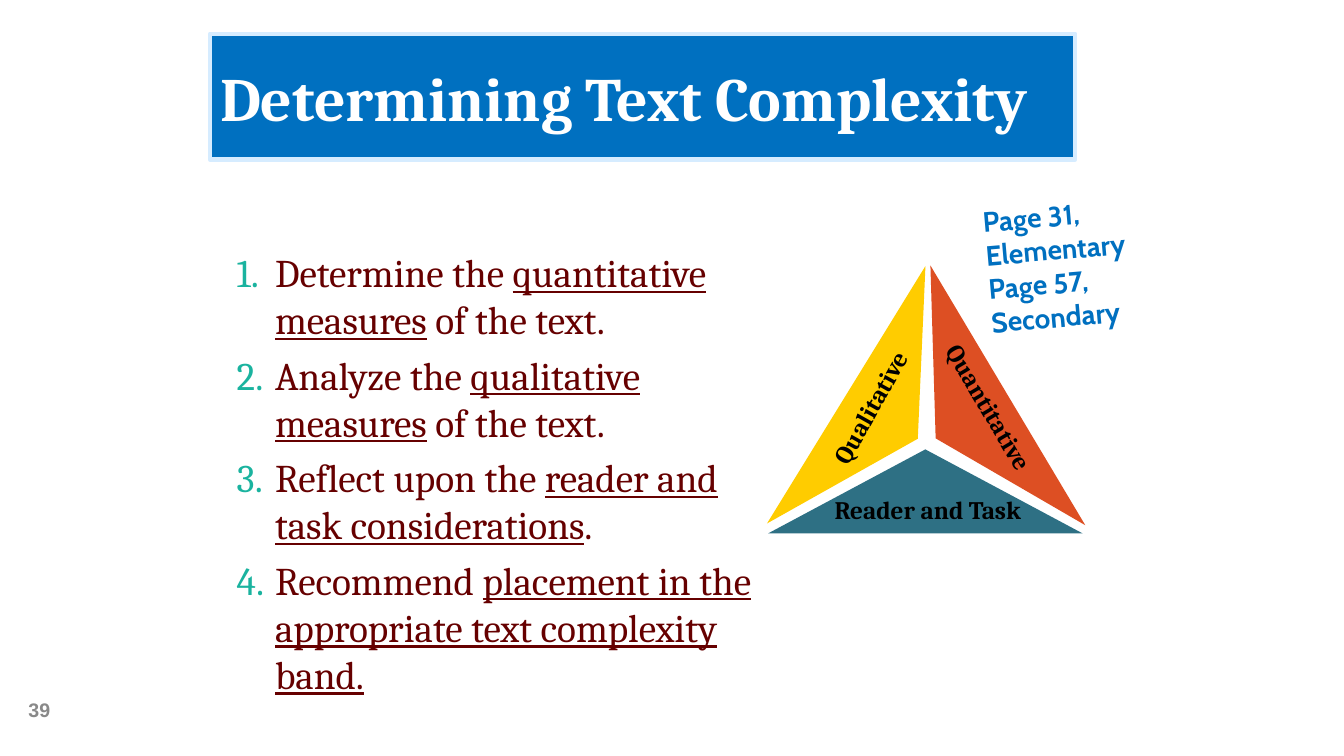
import pptx
import pptx.util
import pptx.dml.color
import pptx.enum.shapes
import pptx.enum.text
import pptx.oxml.ns
import lxml.etree

COLS, ROWS = 160, 90
WIDE, HIGH = pptx.util.Inches(13.33), pptx.util.Inches(7.5)
ALIGN = pptx.enum.text.PP_ALIGN
ANCHOR = pptx.enum.text.MSO_ANCHOR
SHAPE = pptx.enum.shapes.MSO_SHAPE

STEPS = [
    ("Determine the ", "quantitative measures", " of the text."),
    ("Analyze the ", "qualitative measures", " of the text."),
    ("Reflect upon the ", "reader and task considerations", "."),
    ("Recommend ", "placement in the appropriate text complexity band."),
]

FACES = [
    ("Qualitative", "FFCC00", (13.5, 18.12, 36), 121.6, (12.06, 16.98, 19.92), 299.2),
    ("Quantitative", "DD4F23", (24.18, 18.12, 36), 239.2, (26.28, 16.98, 20.04), 59.3),
    ("Reader and Task", "2E7084", (18.66, 27, 37.44), 0, (18.96, 29.1, 27.96), 0),
]


def color(code):
    return pptx.dml.color.RGBColor.from_string(code)


def grid(box):
    x, y, w, h = box
    return (round(WIDE * x / COLS), round(HIGH * y / ROWS),
            round(WIDE * w / COLS), round(HIGH * h / ROWS))


def center(box, spot, high):
    x, y, wide = spot
    return box[0] + x - wide / 2, box[1] + y - high / 2, wide, high


def add_run(para, text, size, font, code, bold=False, under=False):
    run = para.add_run()
    run.text = text
    run.font.size = pptx.util.Pt(size)
    run.font.name = font
    run.font.color.rgb = color(code)
    run.font.bold = bold
    run.font.underline = under


def add_box(shapes, box, turn=0, anchor=ANCHOR.TOP):
    item = shapes.add_textbox(*grid(box))
    item.rotation = turn
    item.text_frame.word_wrap = True
    item.text_frame.vertical_anchor = anchor
    return item.text_frame


def add_title(slide, box):
    title = slide.shapes.title
    title.left, title.top, title.width, title.height = grid(box)
    title.fill.solid()
    title.fill.fore_color.rgb = color("0070C0")
    title.line.color.rgb = color("D6ECFF")
    title.line.width = pptx.util.Pt(3)
    frame = title.text_frame
    frame.auto_size = pptx.enum.text.MSO_AUTO_SIZE.NONE
    frame.vertical_anchor = ANCHOR.MIDDLE
    para = frame.paragraphs[0]
    para.alignment = ALIGN.LEFT
    add_run(para, "Determining Text Complexity", 44, "Cambria", "FFFFFF", True)


def add_number(slide, box):
    para = add_box(slide.shapes, box, anchor=ANCHOR.MIDDLE).paragraphs[0]
    para.alignment = ALIGN.CENTER
    add_run(para, "39", 14, "Arial", "898989", True)


def number(para, code):
    props = para._p.get_or_add_pPr()
    props.set("marL", str(pptx.util.Inches(0.88)))
    props.set("indent", str(pptx.util.Inches(-0.38)))
    qn = pptx.oxml.ns.qn
    tint = lxml.etree.SubElement(props, qn("a:buClr"))
    lxml.etree.SubElement(tint, qn("a:srgbClr"), val=code)
    lxml.etree.SubElement(props, qn("a:buAutoNum"), type="arabicPeriod")


def add_steps(slide, box):
    frame = add_box(slide.shapes, box)
    for i, step in enumerate(STEPS):
        para = frame.add_paragraph() if i else frame.paragraphs[0]
        para.space_before = pptx.util.Pt(6)
        number(para, "1AB39F")
        for j, text in enumerate(step):
            add_run(para, text, 28, "Cambria", "660000", under=j == 1)


def add_faces(slide, box):
    for text, code, spot, turn, mark, tilt in FACES:
        shapes = slide.shapes.add_group_shape().shapes
        face = shapes.add_shape(SHAPE.ISOSCELES_TRIANGLE, *grid(center(box, spot, 10)))
        face.rotation = turn
        face.shadow.inherit = False
        face.fill.solid()
        face.fill.fore_color.rgb = color(code)
        face.line.fill.background()
        para = add_box(shapes, center(box, mark, 4.8), tilt).paragraphs[0]
        para.alignment = ALIGN.CENTER
        add_run(para, text, 18, "Cambria", "000000", True)


def add_pages(slide, box):
    frame = add_box(slide.shapes, box, 355.1)
    for i, text in enumerate(("Page 31, Elementary", "Page 57, Secondary")):
        para = frame.add_paragraph() if i else frame.paragraphs[0]
        add_run(para, text, 20, "Cabin", "0070C0", True)


def main():
    deck = pptx.Presentation()
    deck.slide_width, deck.slide_height = WIDE, HIGH
    slide = deck.slides.add_slide(deck.slide_layouts[5])
    add_number(slide, (0, 82, 9.36, 5))
    add_title(slide, (25, 4, 103, 15))
    add_steps(slide, (21, 29, 70, 55))
    add_faces(slide, (91.5, 31.5, 37.5, 32))
    add_pages(slide, (116.3, 22.9, 22.3, 17.4))
    deck.save("out.pptx")


if __name__ == "__main__":
    main()
